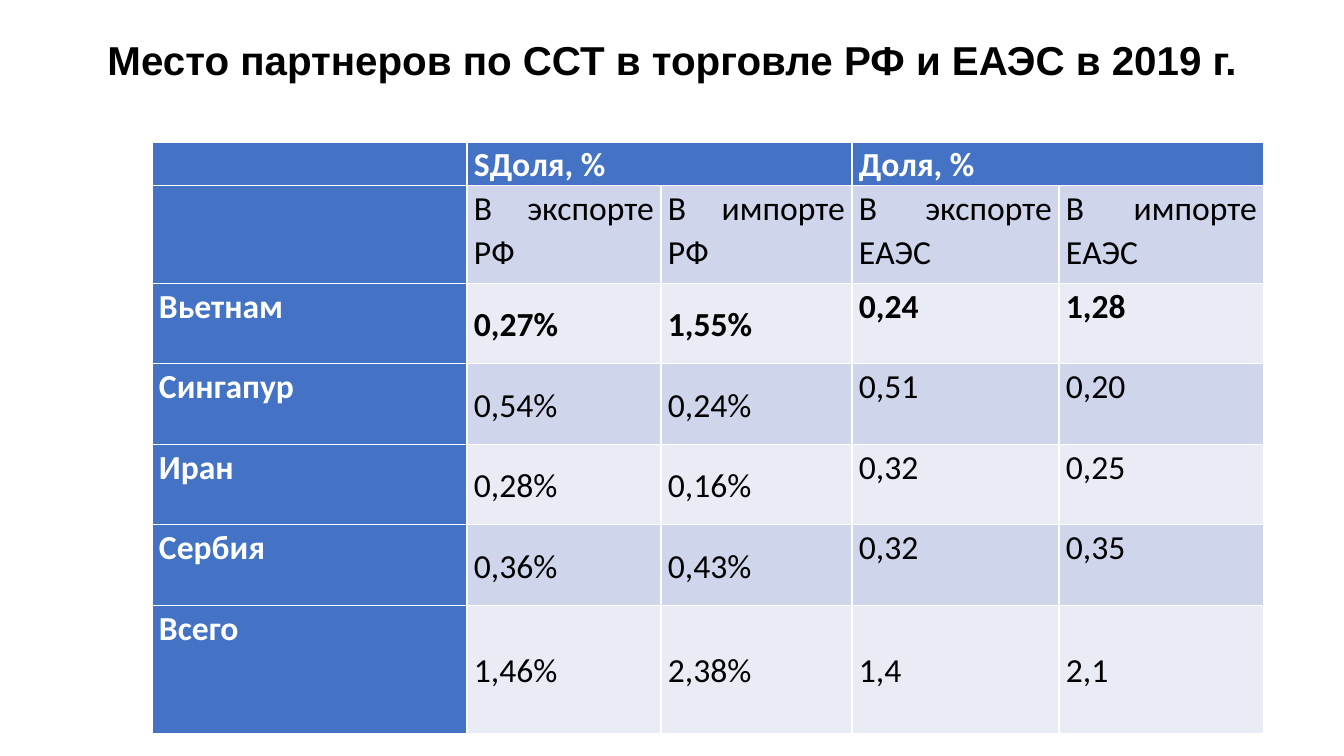
from pptx import Presentation
from pptx.dml.color import RGBColor
from pptx.enum.text import MSO_ANCHOR, PP_ALIGN
from pptx.util import Pt

PX = 12192000 / 1344
MIDDLE, TOP = MSO_ANCHOR.MIDDLE, MSO_ANCHOR.TOP
CENTER, JUSTIFY = PP_ALIGN.CENTER, PP_ALIGN.JUSTIFY

WHITE = RGBColor(0xFF, 0xFF, 0xFF)
BLACK = RGBColor(0, 0, 0)
BLUE = RGBColor(0x44, 0x72, 0xC4)
BAND_DARK = RGBColor(0xCF, 0xD5, 0xEA)
BAND_LIGHT = RGBColor(0xE9, 0xEB, 0xF5)

COLUMN_WIDTHS = [315, 194, 191, 207, 205]
ROW_HEIGHTS = [43, 98, 80, 81, 80, 81, 128]
SHARES = [
    ["", "SДоля, %", "", "Доля, %", ""],
    ["", "В экспорте РФ", "В импорте РФ", "В экспорте ЕАЭС", "В импорте ЕАЭС"],
    ["Вьетнам", "0,27%", "1,55%", "0,24", "1,28"],
    ["Сингапур", "0,54%", "0,24%", "0,51", "0,20"],
    ["Иран", "0,28%", "0,16%", "0,32", "0,25"],
    ["Сербия", "0,36%", "0,43%", "0,32", "0,35"],
    ["Всего", "1,46%", "2,38%", "1,4", "2,1"],
]
VIETNAM_ROW = 2
TOTAL_ROW = len(SHARES) - 1


def px(length):
    return round(length * PX)


def format_paragraph(paragraph, name, size, color, bold, alignment, spacing):
    paragraph.alignment = alignment
    paragraph.line_spacing = spacing
    paragraph.space_before = paragraph.space_after = Pt(0)
    font = paragraph.font
    font.name, font.size, font.bold = name, Pt(size), bold
    font.color.rgb = color


presentation = Presentation()
presentation.slide_width, presentation.slide_height = px(1344), px(756)
slide = presentation.slides.add_slide(presentation.slide_layouts[5])

# Title
title = slide.shapes.title
title.left, title.top, title.width, title.height = px(93), px(15), px(1159), px(94)
title.text_frame.text = "Место партнеров по ССТ в торговле РФ и ЕАЭС в 2019 г."
title.text_frame.vertical_anchor = MIDDLE
format_paragraph(title.text_frame.paragraphs[0], "Arial", 28.8, BLACK, True, CENTER, 0.9)

# Table grid; the table style supplies the white borders
table = slide.shapes.add_table(
    len(ROW_HEIGHTS), len(COLUMN_WIDTHS), px(152), px(142),
    px(sum(COLUMN_WIDTHS)), px(sum(ROW_HEIGHTS))).table
table.first_col = True
for column, width in zip(table.columns, COLUMN_WIDTHS):
    column.width = px(width)
for row, height in zip(table.rows, ROW_HEIGHTS):
    row.height = px(height)
for first in (1, 3):
    table.cell(0, first).merge(table.cell(0, first + 1))

# Cell text and fills
for row_index, values in enumerate(SHARES):
    band = BAND_DARK if row_index % 2 else BAND_LIGHT
    for column_index, value in enumerate(values):
        heading = row_index == 0 or column_index == 0
        percent = row_index >= VIETNAM_ROW and column_index in (1, 2)
        total = row_index == TOTAL_ROW and column_index > 0
        cell = table.cell(row_index, column_index)
        cell.fill.solid()
        cell.fill.fore_color.rgb = BLUE if heading else band
        cell.margin_left = cell.margin_right = px(7)
        cell.margin_top = cell.margin_bottom = 0
        cell.vertical_anchor = MIDDLE if percent or total else TOP
        cell.text = value
        format_paragraph(cell.text_frame.paragraphs[0], "Calibri", 24,
                         WHITE if heading else BLACK,
                         heading or row_index == VIETNAM_ROW, JUSTIFY, 1.07)

presentation.save("out.pptx")
